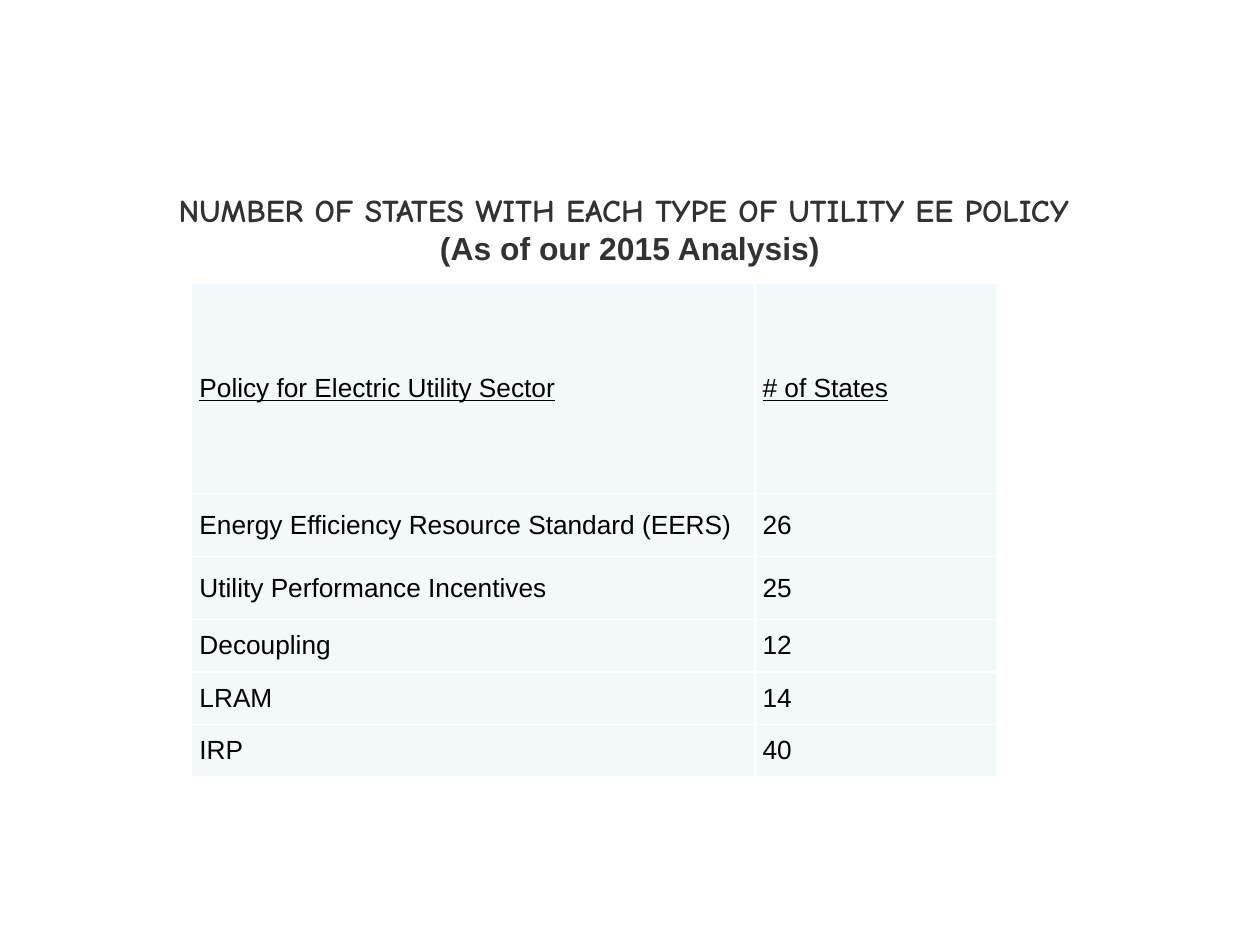
"""Build a slide with a table of state counts by utility energy efficiency policy."""
import pptx
import pptx.dml.color
import pptx.enum.text
import pptx.oxml
import pptx.oxml.ns
import pptx.util

Pt = pptx.util.Pt
RGB = pptx.dml.color.RGBColor.from_string
ALIGN = pptx.enum.text.PP_ALIGN
ANCHOR = pptx.enum.text.MSO_ANCHOR
COLORS = {"title": "323232", "text": "000000", "cell": "F3F9FA", "border": "FFFFFF"}


def add_run(p, text, color, **formats):
    r = p.add_run()
    r.text = text
    r.font.color.rgb = RGB(COLORS[color])
    for name, value in formats.items():
        setattr(r.font, name, value)


def add_borders(cell):
    tcPr = cell._tc.get_or_add_tcPr()
    for side in ("lnL", "lnR", "lnT", "lnB"):
        tcPr.append(pptx.oxml.parse_xml(
            f'<a:{side} {pptx.oxml.ns.nsdecls("a")} w="{Pt(1)}"><a:solidFill>'
            f'<a:srgbClr val="{COLORS["border"]}"/></a:solidFill></a:{side}>'))


prs = pptx.Presentation()
prs.slide_width, prs.slide_height = Pt(720), Pt(540)
s = prs.slides.add_slide(prs.slide_layouts[6])

sp = s.shapes.add_textbox(Pt(49.7), Pt(104.4), Pt(620.6), Pt(71.3))
tf = sp.text_frame
for name, value in {"word_wrap": True, "vertical_anchor": ANCHOR.TOP,
                    "margin_top": Pt(4.5), "margin_bottom": Pt(0)}.items():
    setattr(tf, name, value)
p = tf.paragraphs[0]
p.alignment = ALIGN.CENTER
title_format = {"size": Pt(18.2), "bold": True}
add_run(p, "NUMBER OF STATES WITH EACH TYPE OF UTILITY EE POLICY ", "title",
        name="Comic Neue", **title_format)
p.add_line_break()
add_run(p, "(As of our 2015 Analysis)", "title", name="Arial", **title_format)

rows = [
    ("Policy for Electric Utility Sector", "# of States"),
    ("Energy Efficiency Resource Standard (EERS)", "26"),
    ("Utility Performance Incentives", "25"),
    ("Decoupling", "12"),
    ("LRAM", "14"),
    ("IRP", "40"),
]
widths = [321.8, 138.2]
heights = [120, 36, 36, 30, 30, 30]
cell_format = {"vertical_anchor": ANCHOR.MIDDLE, "margin_left": Pt(4.5),
               "margin_right": Pt(4.5), "margin_top": Pt(0), "margin_bottom": Pt(0)}

table = s.shapes.add_table(len(rows), len(widths), Pt(109.5), Pt(162),
                           Pt(sum(widths)), Pt(sum(heights))).table
table.first_row = table.horz_banding = False
for column, width in zip(table.columns, widths):
    column.width = Pt(width)
for i, (values, height) in enumerate(zip(rows, heights)):
    table.rows[i].height = Pt(height)
    for j, value in enumerate(values):
        cell = table.cell(i, j)
        add_borders(cell)
        cell.fill.solid()
        cell.fill.fore_color.rgb = RGB(COLORS["cell"])
        for name, setting in cell_format.items():
            setattr(cell, name, setting)
        add_run(cell.text_frame.paragraphs[0], value, "text",
                name="Arial", size=Pt(15), bold=False, underline=i == 0)

prs.save("out.pptx")
